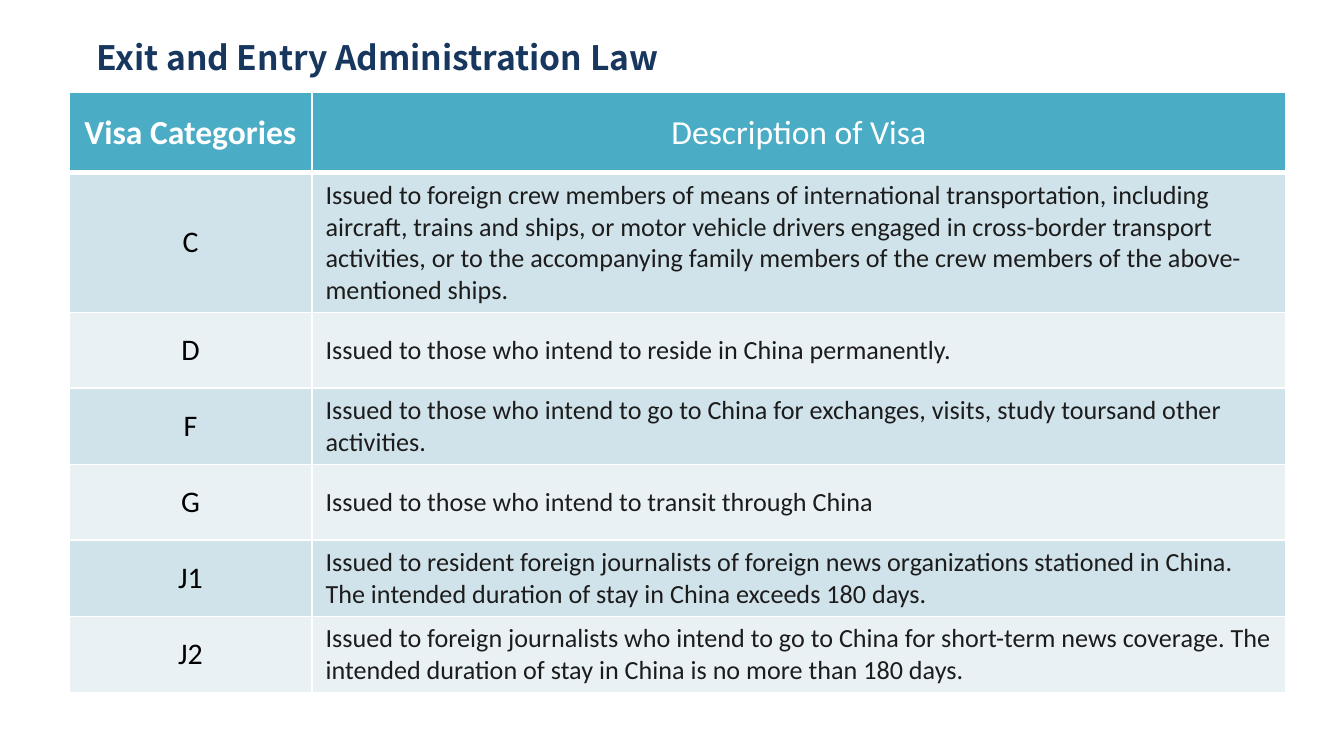
from pptx import Presentation
from pptx.util import Cm, Pt
from pptx.dml.color import RGBColor as RGB
from pptx.enum.text import MSO_ANCHOR as Anchor, MSO_AUTO_SIZE as Auto, PP_ALIGN as Align
from lxml.etree import fromstring

NS = "http://schemas.openxmlformats.org/drawingml/2006/main"


def style(para, size, tint, bold=False, face="Calibri"):
    font = para.runs[0].font
    font.name, font.size, font.bold = face, Pt(size), bold
    font.color.rgb = RGB.from_string(tint)


def edge(cell, side, width):
    cell._tc.get_or_add_tcPr().append(fromstring(
        f'<a:ln{side} xmlns:a="{NS}" w="{Pt(width)}"><a:solidFill>'
        f'<a:srgbClr val="FFFFFF"/></a:solidFill></a:ln{side}>'))


rows = [
    ("Visa Categories", "Description of Visa"),
    ("C", "Issued to foreign crew members of means of international transportation, "
          "including aircraft, trains and ships, or motor vehicle drivers engaged in "
          "cross-border transport activities, or to the accompanying family members "
          "of the crew members of the above-mentioned ships."),
    ("D", "Issued to those who intend to reside in China permanently."),
    ("F", "Issued to those who intend to go to China for exchanges, visits, "
          "study toursand other activities."),
    ("G", "Issued to those who intend to transit through China"),
    ("J1", "Issued to resident foreign journalists of foreign news organizations "
           "stationed in China. The intended duration of stay in China exceeds 180 days."),
    ("J2", "Issued to foreign journalists who intend to go to China for short-term news "
           "coverage. The intended duration of stay in China is no more than 180 days."),
]

deck = Presentation()
deck.slide_width, deck.slide_height = Cm(25.4), Cm(14.28)
slide = deck.slides.add_slide(deck.slide_layouts[6])

title = slide.shapes.add_textbox(Cm(1.57), Cm(0.58), Cm(11.53), Cm(1.02))
frame = title.text_frame
frame.text = "Exit and Entry Administration Law"
frame.word_wrap = False
frame.auto_size = Auto.SHAPE_TO_FIT_TEXT
style(frame.paragraphs[0], 18, "17375E", True, "Noto Sans CJK SC")

highs = [1.51, 2.64] + [1.43] * 5
table = slide.shapes.add_table(
    len(rows), 2, Cm(1.3), Cm(1.75), Cm(23), Cm(sum(highs))).table
for col, wide in zip(table.columns, (4.6, 18.4)):
    col.width = Cm(wide)

for i, (row, high) in enumerate(zip(rows, highs)):
    table.rows[i].height = Cm(high)
    head = i == 0
    fill = "4BACC6" if head else ("E9F1F5", "D0E3EA")[i % 2]
    for j, text in enumerate(row):
        cell = table.cell(i, j)
        cell.text_frame.text = text
        cell.vertical_anchor = Anchor.MIDDLE
        for side in "LRTB":
            edge(cell, side, 3 if head and side == "B" else 1)
        cell.fill.solid()
        cell.fill.fore_color.rgb = RGB.from_string(fill)
        para = cell.text_frame.paragraphs[0]
        para.alignment = Align.CENTER if head or j == 0 else Align.LEFT
        if head:
            style(para, 18, "FFFFFF", j == 0)
        else:
            style(para, (16, 14)[j], ("000000", "1C1C1C")[j])

deck.save("out.pptx")
